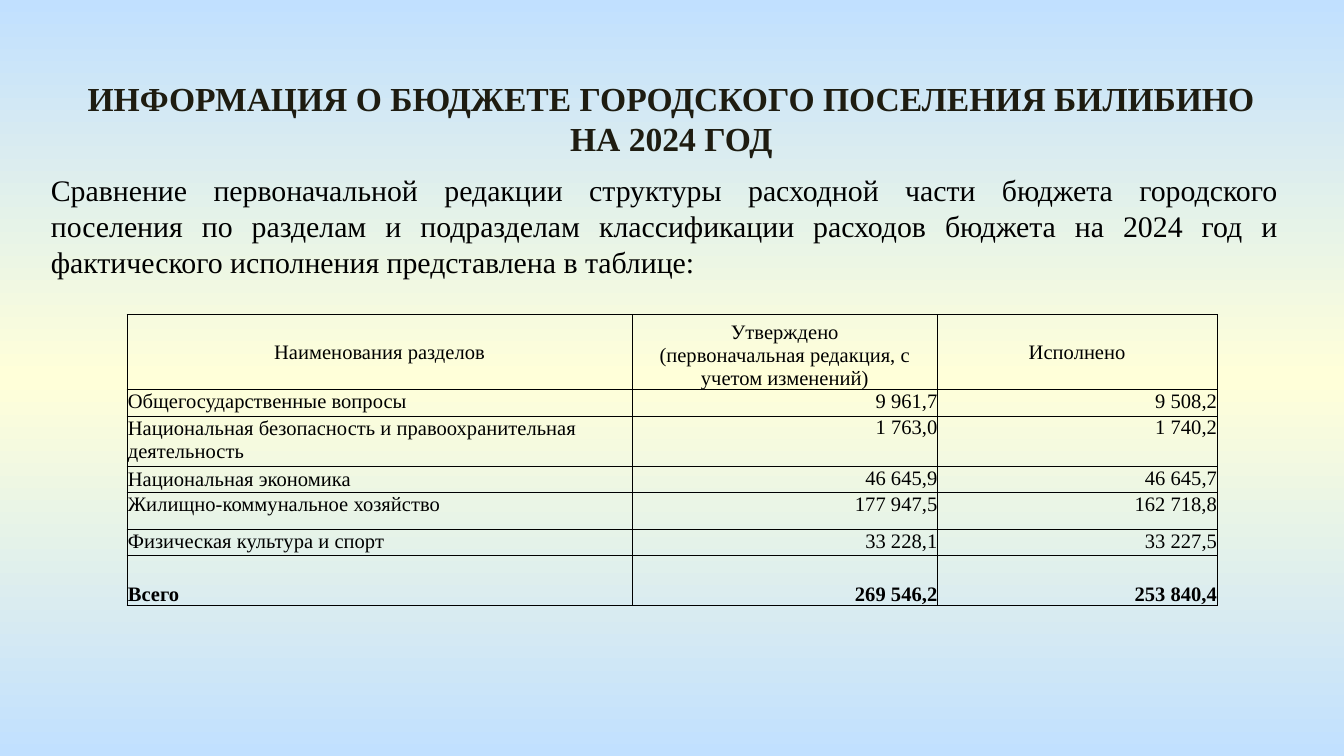
from copy import deepcopy
from dataclasses import dataclass

from lxml.etree import SubElement
from pptx import Presentation
from pptx.dml.color import RGBColor
from pptx.enum.text import MSO_ANCHOR, MSO_AUTO_SIZE, PP_ALIGN
from pptx.oxml.ns import qn
from pptx.util import Pt

FONT = "Times New Roman"
BLACK = "000000"
BLUE = "C1E0FF"
CREAM = "FFFFD9"
COLUMN_WIDTHS = (270.7, 163.5, 149.8)


@dataclass
class TextBlock:
    left: float
    top: float
    width: float
    height: float
    text: str
    size: float
    color: str
    align: PP_ALIGN
    bold: bool = False


@dataclass
class BudgetRow:
    height: float
    texts: tuple[str, str, str]
    anchor: MSO_ANCHOR = MSO_ANCHOR.TOP
    header: bool = False
    bold: bool = False


BLOCKS = [
    TextBlock(20.2, 88.5, 671.8, 65.5,
              "Сравнение первоначальной редакции структуры расходной части бюджета "
              "городского поселения по разделам и подразделам классификации расходов "
              "бюджета на 2024 год и фактического исполнения представлена в таблице:",
              16, BLACK, PP_ALIGN.JUSTIFY),
    TextBlock(28.1, 38.2, 663.1, 51.1,
              "ИНФОРМАЦИЯ О БЮДЖЕТЕ ГОРОДСКОГО ПОСЕЛЕНИЯ БИЛИБИНО НА 2024 ГОД",
              18, "1E1C11", PP_ALIGN.CENTER, True),
]

ROWS = [
    BudgetRow(40, ("Наименования разделов",
                   "Утверждено\n(первоначальная редакция, с учетом изменений)",
                   "Исполнено"), MSO_ANCHOR.MIDDLE, header=True),
    BudgetRow(14.4, ("Общегосударственные вопросы", "9 961,7", "9 508,2")),
    BudgetRow(26.8, ("Национальная безопасность и правоохранительная деятельность",
                     "1 763,0", "1 740,2")),
    BudgetRow(13.9, ("Национальная экономика", "46 645,9", "46 645,7")),
    BudgetRow(19.8, ("Жилищно-коммунальное хозяйство", "177 947,5", "162 718,8")),
    BudgetRow(13.9, ("Физическая культура и спорт", "33 228,1", "33 227,5")),
    BudgetRow(26.8, ("Всего", "269 546,2", "253 840,4"), MSO_ANCHOR.BOTTOM, bold=True),
]


def rgb(value: str) -> RGBColor:
    return RGBColor.from_string(value)


def write(para, text: str, size: float, color: str, align: PP_ALIGN, bold: bool) -> None:
    para.text = text
    para.alignment = align
    para.font.name = FONT
    para.font.size = Pt(size)
    para.font.bold = bold
    para.font.color.rgb = rgb(color)


def paint_background(page) -> None:
    fill = page.background.fill
    fill.gradient()
    fill.gradient_angle = 90
    stop_list = page.element.find(".//" + qn("a:gsLst"))
    stop_list.append(deepcopy(stop_list[0]))
    for stop, position, color in zip(fill.gradient_stops, (0, 0.5, 1), (BLUE, CREAM, BLUE)):
        stop.position = position
        stop.color.rgb = rgb(color)


def add_block(page, block: TextBlock) -> None:
    box = page.shapes.add_textbox(Pt(block.left), Pt(block.top), Pt(block.width), Pt(block.height))
    box.text_frame.word_wrap = True
    box.text_frame.auto_size = MSO_AUTO_SIZE.SHAPE_TO_FIT_TEXT
    write(box.text_frame.paragraphs[0], block.text, block.size, block.color, block.align, block.bold)


def add_borders(cell) -> None:
    properties = cell._tc.get_or_add_tcPr()
    for index, side in enumerate(("lnL", "lnR", "lnT", "lnB")):
        line = SubElement(properties, qn(f"a:{side}"), w=str(Pt(0.5)))
        SubElement(SubElement(line, qn("a:solidFill")), qn("a:srgbClr"), val=BLACK)
        properties.insert(index, line)


def fill_cell(cell, row: BudgetRow, column: int) -> None:
    if row.header:
        align = PP_ALIGN.CENTER
    else:
        align = PP_ALIGN.RIGHT if column else PP_ALIGN.LEFT
    inset = Pt(0.5) if row.header or column == 0 else 0
    cell.margin_left = cell.margin_right = cell.margin_top = inset
    cell.margin_bottom = 0
    cell.vertical_anchor = MSO_ANCHOR.BOTTOM if row.header and column == 1 else row.anchor
    cell.fill.background()
    add_borders(cell)
    write(cell.text_frame.paragraphs[0], row.texts[column], 11, BLACK, align, row.bold)


def add_budget_table(page) -> None:
    table = page.shapes.add_table(
        len(ROWS), len(COLUMN_WIDTHS), Pt(68), Pt(168.6),
        Pt(sum(COLUMN_WIDTHS)), Pt(sum(row.height for row in ROWS))).table
    table.first_row = table.horz_banding = False
    for column, width in zip(table.columns, COLUMN_WIDTHS):
        column.width = Pt(width)
    for index, row in enumerate(ROWS):
        table.rows[index].height = Pt(row.height)
        for column in range(len(COLUMN_WIDTHS)):
            fill_cell(table.cell(index, column), row, column)


def main() -> None:
    """Build the budget comparison slide."""
    deck = Presentation()
    deck.slide_width, deck.slide_height = Pt(720), Pt(405)
    page = deck.slides.add_slide(deck.slide_layouts[6])
    paint_background(page)
    body, title = BLOCKS
    add_block(page, body)
    add_budget_table(page)
    add_block(page, title)
    deck.save("out.pptx")


if __name__ == "__main__":
    main()
